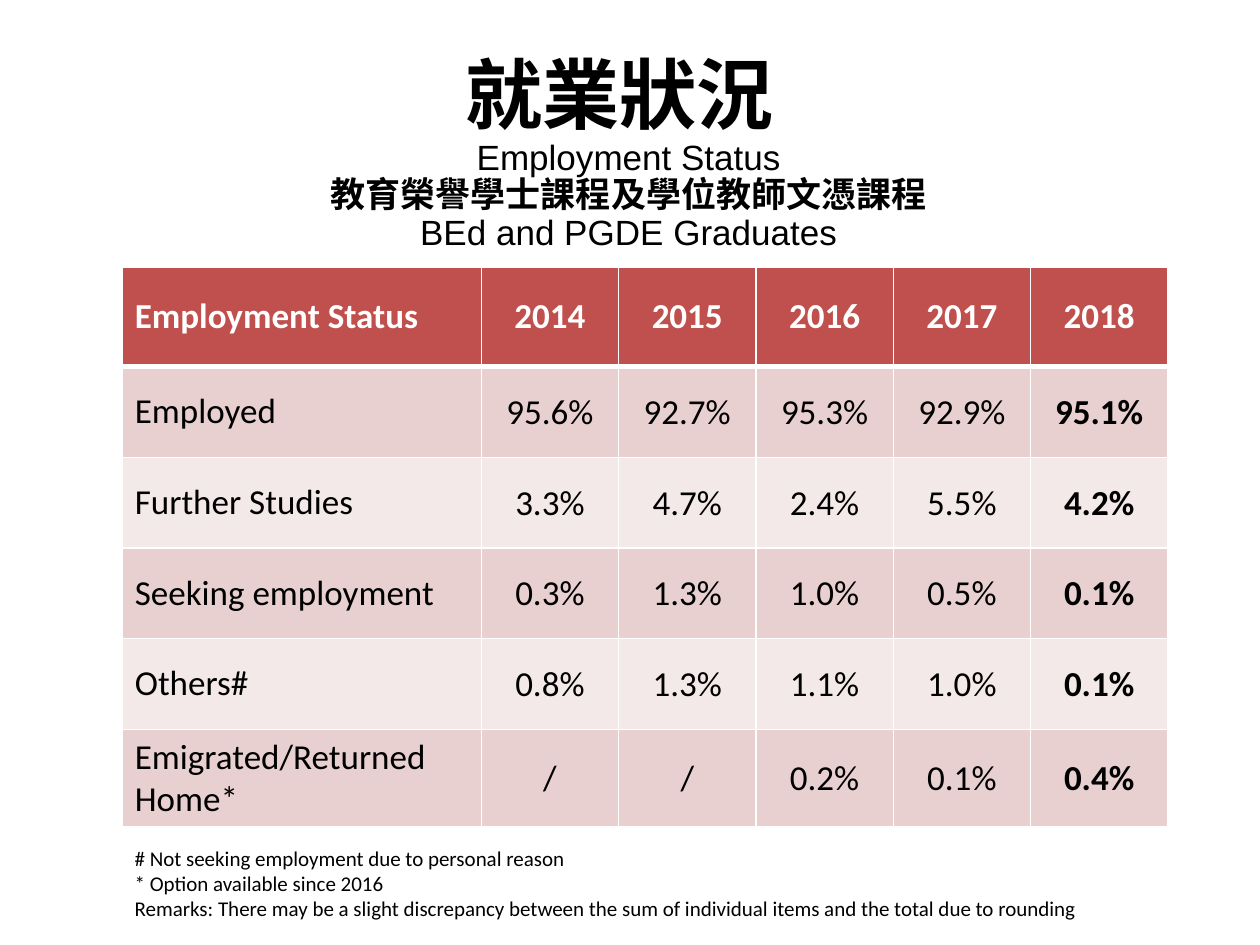
from lxml import etree
from pptx import Presentation
from pptx.dml.color import RGBColor
from pptx.enum import text
from pptx.oxml import ns
from pptx.util import Inches, Pt

# Content: each title line is a list of (words, font, size, bold)
LATIN, CHINESE, SIMPLIFIED = "Arial", "Noto Sans CJK TC", "Noto Sans CJK SC"
TITLE = [
    [("就業狀況 ", "Calibri", "heading", True)],
    [("Employment Status", LATIN, "body", False)],
    [("教育榮譽學士課程", CHINESE, "body", True),
     ("及", SIMPLIFIED, "body", True),
     ("學位教師文憑課程", CHINESE, "body", True)],
    [("BEd and PGDE Graduates", LATIN, "body", False)],
]
ROWS = [
    ("Employment Status", "2014", "2015", "2016", "2017", "2018"),
    ("Employed", "95.6%", "92.7%", "95.3%", "92.9%", "95.1%"),
    ("Further Studies", "3.3%", "4.7%", "2.4%", "5.5%", "4.2%"),
    ("Seeking employment", "0.3%", "1.3%", "1.0%", "0.5%", "0.1%"),
    ("Others#", "0.8%", "1.3%", "1.1%", "1.0%", "0.1%"),
    ("Emigrated/Returned Home*", "/", "/", "0.2%", "0.1%", "0.4%"),
]
NOTES = [
    "# Not seeking employment due to personal reason",
    "* Option available since 2016",
    "Remarks: There may be a slight discrepancy between the sum of "
    "individual items and the total due to rounding",
]

THEME = {
    "font": "Calibri", "heading": 44, "body": 20, "note": 12,
    "ink": "000000", "white": "FFFFFF", "header": "C0504D",
    "bands": ("E8D0D0", "F4E9E9"),
}
LEFT, TABLE_TOP = 0.97, 2.12
COLUMNS = [2.85] + [1.09] * 5
HEIGHTS = [0.79] + [0.72] * 4 + [0.77]


def add_span(para, words, size, bold=False, color="ink", font=THEME["font"]):
    span = para.add_run()
    span.text = words
    span.font.name = font
    span.font.size = Pt(THEME[size])
    span.font.bold = bold
    span.font.color.rgb = RGBColor.from_string(THEME[color])
    return span


def set_margins(target, left, top, right, bottom):
    target.margin_left, target.margin_top = Inches(left), Inches(top)
    target.margin_right, target.margin_bottom = Inches(right), Inches(bottom)


def set_borders(cell, widths):
    properties = cell._tc.get_or_add_tcPr()
    for index, (side, width) in enumerate(zip("LRTB", widths)):
        line = etree.Element(ns.qn(f"a:ln{side}"), w=str(Pt(width)))
        fill = etree.SubElement(line, ns.qn("a:solidFill"))
        etree.SubElement(fill, ns.qn("a:srgbClr"), val=THEME["white"])
        properties.insert(index, line)


def add_title(page):
    box = page.shapes.title
    box.left, box.top = Inches(0.51), Inches(0.36)
    box.width, box.height = Inches(8.96), Inches(1.74)
    frame = box.text_frame
    frame.word_wrap = True
    frame.auto_size = text.MSO_AUTO_SIZE.NONE
    frame.vertical_anchor = text.MSO_ANCHOR.MIDDLE
    set_margins(frame, 0.1, 0, 0.1, 0)
    para = frame.paragraphs[0]
    para.alignment = text.PP_ALIGN.CENTER
    para.line_spacing = 0.9
    for number, line in enumerate(TITLE):
        if number:
            para.add_line_break()
        for words, font, size, bold in line:
            span = add_span(para, words, size, bold, font=font)
            east_asian = SIMPLIFIED if font == SIMPLIFIED else CHINESE
            latin = span.font._element.find(ns.qn("a:latin"))
            latin.addnext(etree.Element(ns.qn("a:ea"), typeface=east_asian))


def add_status_table(page):
    table = page.shapes.add_table(
        len(ROWS), len(COLUMNS), Inches(LEFT), Inches(TABLE_TOP),
        Inches(sum(COLUMNS)), Inches(sum(HEIGHTS))).table
    for column, width in zip(table.columns, COLUMNS):
        column.width = Inches(width)
    for r, (values, height) in enumerate(zip(ROWS, HEIGHTS)):
        table.rows[r].height = Inches(height)
        header = r == 0
        fill = THEME["header"] if header else THEME["bands"][(r - 1) % 2]
        for c, value in enumerate(values):
            cell = table.cell(r, c)
            cell.fill.solid()
            cell.fill.fore_color.rgb = RGBColor.from_string(fill)
            # The rule under the header is thicker than the grid
            set_borders(cell, (1, 1, 3 if r == 1 else 1, 3 if header else 1))
            cell.vertical_anchor = text.MSO_ANCHOR.MIDDLE
            roomy = header or c == 0
            set_margins(cell, *((0.1, 0.05, 0.1, 0.05) if roomy
                                else (0.01, 0.01, 0.01, 0)))
            para = cell.text_frame.paragraphs[0]
            para.alignment = text.PP_ALIGN.CENTER if c else text.PP_ALIGN.LEFT
            latest = c == len(COLUMNS) - 1
            add_span(para, value, "body", header or latest,
                     "white" if header else "ink")


def add_notes(page):
    box = page.shapes.add_textbox(
        Inches(LEFT), Inches(6.66), Inches(10.88), Inches(0.71))
    frame = box.text_frame
    frame.word_wrap = True
    frame.auto_size = text.MSO_AUTO_SIZE.SHAPE_TO_FIT_TEXT
    for number, note in enumerate(NOTES):
        para = frame.add_paragraph() if number else frame.paragraphs[0]
        add_span(para, note, "note")


def main():
    deck = Presentation()
    deck.slide_width, deck.slide_height = Inches(10), Inches(7.5)
    page = deck.slides.add_slide(deck.slide_layouts[5])  # title only
    add_title(page)
    add_notes(page)
    add_status_table(page)
    deck.save("out.pptx")


if __name__ == "__main__":
    main()
